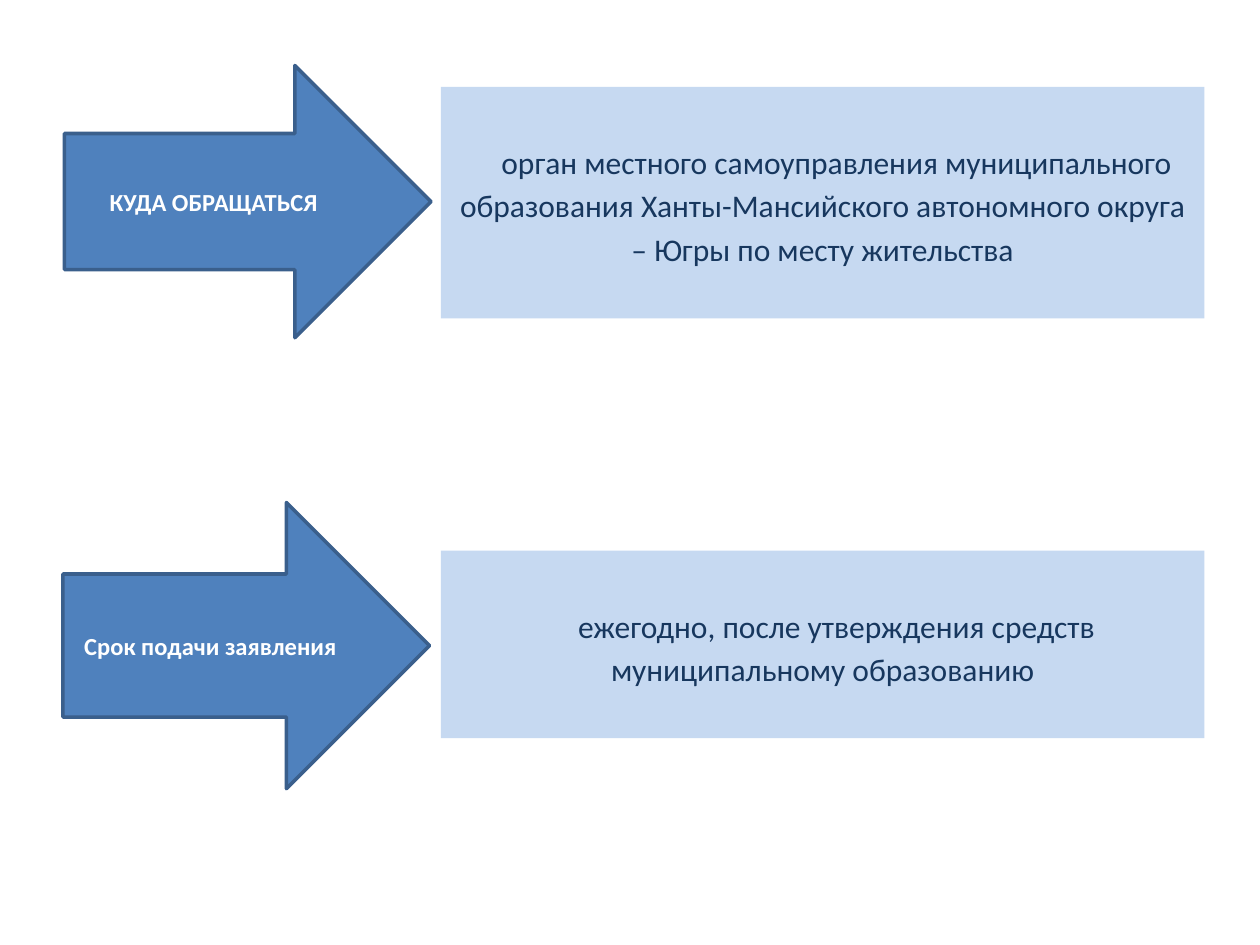
from dataclasses import dataclass

from pptx import Presentation
from pptx.dml.color import RGBColor
from pptx.enum.shapes import MSO_SHAPE
from pptx.enum.text import MSO_ANCHOR, PP_ALIGN
from pptx.util import Cm, Pt

ARROW, RECT = MSO_SHAPE.RIGHT_ARROW, MSO_SHAPE.RECTANGLE
TOP, MIDDLE = MSO_ANCHOR.TOP, MSO_ANCHOR.MIDDLE
CENTER = PP_ALIGN.CENTER

BLUE = RGBColor(0x4F, 0x81, 0xBD)
OUTLINE = RGBColor(0x3A, 0x5F, 0x8C)
PALE_BLUE = RGBColor(0xC6, 0xD9, 0xF1)
NAVY = RGBColor(0x17, 0x37, 0x5E)
WHITE = RGBColor(0xFF, 0xFF, 0xFF)

LABEL_FONT = {"name": "Calibri", "size": Pt(14), "bold": True}
ANSWER_FONT = {"name": "Calibri", "size": Pt(18), "bold": False}
ARROW_WIDTH = 7.39
BOX_LEFT, BOX_WIDTH = 8.89, 15.39
FIRST_LINE_INDENT = Cm(0.56)


@dataclass
class Row:
    """One question arrow and its answer box, in centimetres."""
    label: str
    arrow_left: float
    arrow_top: float
    arrow_height: float
    answer: str
    box_top: float
    box_height: float


ROWS = [
    Row("КУДА ОБРАЩАТЬСЯ", 1.3, 1.32, 5.49,
        "орган местного самоуправления муниципального образования "
        "Ханты-Мансийского автономного округа – Югры по месту жительства",
        1.75, 4.67),
    Row("Срок подачи заявления", 1.27, 10.13, 5.77,
        "ежегодно, после утверждения средств муниципальному образованию",
        11.1, 3.78),
]


def add_text_shape(s, kind, box: tuple, fill: RGBColor, text: str,
                   color: RGBColor, font: dict, anchor):
    sp = s.shapes.add_shape(kind, *(Cm(v) for v in box))
    sp.shadow.inherit = False
    sp.fill.solid()
    sp.fill.fore_color.rgb = fill
    tf = sp.text_frame
    tf.word_wrap = True
    tf.vertical_anchor = anchor
    p = tf.paragraphs[0]
    p.alignment = CENTER
    r = p.add_run()
    r.text = text
    for name, value in font.items():
        setattr(r.font, name, value)
    r.font.color.rgb = color
    return sp


def add_arrow(s, row: Row) -> None:
    box = (row.arrow_left, row.arrow_top, ARROW_WIDTH, row.arrow_height)
    sp = add_text_shape(s, ARROW, box, BLUE, row.label, WHITE, LABEL_FONT, MIDDLE)
    sp.line.color.rgb = OUTLINE
    sp.line.width = Pt(2)


def add_answer(s, row: Row) -> None:
    box = (BOX_LEFT, row.box_top, BOX_WIDTH, row.box_height)
    sp = add_text_shape(s, RECT, box, PALE_BLUE, row.answer, NAVY, ANSWER_FONT, TOP)
    sp.line.fill.background()
    tf = sp.text_frame
    tf.margin_top = Cm(1.02)
    p = tf.paragraphs[0]
    p.line_spacing = 1.15
    p._p.get_or_add_pPr().set("indent", str(FIRST_LINE_INDENT))


def main() -> None:
    prs = Presentation()
    prs.slide_width, prs.slide_height = Cm(25.4), Cm(19.05)
    s = prs.slides.add_slide(prs.slide_layouts[6])
    for row in ROWS:
        add_arrow(s, row)
        add_answer(s, row)
    prs.save("out.pptx")


if __name__ == "__main__":
    main()
